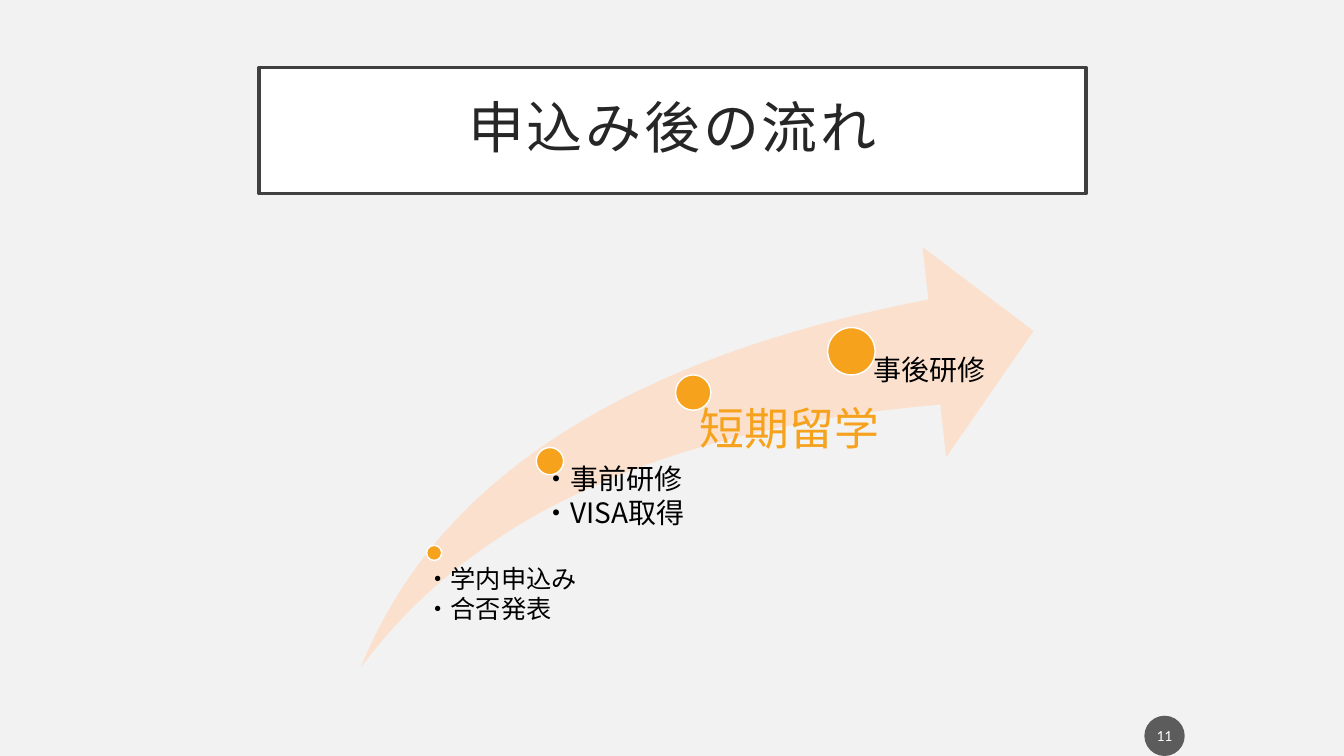
from pptx import Presentation
from pptx.dml.color import RGBColor
from pptx.enum.shapes import MSO_SHAPE as SHAPE
from pptx.enum.text import MSO_ANCHOR as ANCHOR, PP_ALIGN as ALIGN
from pptx.oxml.ns import qn
from pptx.util import Inches, Pt
from lxml.etree import SubElement

PAPER = RGBColor(0xF2, 0xF2, 0xF2)
WHITE = RGBColor(0xFF, 0xFF, 0xFF)
BLACK = RGBColor(0x00, 0x00, 0x00)
BADGE = RGBColor(0x1D, 0x1D, 0x1D)
FRAME = RGBColor(0x40, 0x40, 0x40)
INK = RGBColor(0x26, 0x26, 0x26)
PEACH = RGBColor(0xFB, 0xE0, 0xCD)
ORANGE = RGBColor(0xF6, 0xA2, 0x1D)

# Dot centre and diameter, label box, label inset, size, colour and lines
STEPS = [
    ((32.3, 73.13), 2, (31.06, 74.93, 14.03, 13.2), 0.08, 18, BLACK,
     ["・学内申込み", "・合否発表"]),
    ((40.92, 61), 3.6, (39.31, 61.6, 13.73, 25.33), 0.14, 20, BLACK,
     ["・事前研修", "・VISA取得"]),
    ((51.58, 51.93), 4.67, (50.64, 53.87, 19.5, 34.4), 0.19, 32, ORANGE,
     ["短期留学"]),
    ((63.35, 46.47), 6.27, (63.09, 47.07, 13.73, 39.87), 0.25, 20, BLACK,
     ["事後研修"]),
]


class Deck:
    """Draws on a grid of 100 columns by 100 rows."""
    font = "Noto Sans CJK JP"

    def __init__(self):
        self.prs = Presentation()
        self.prs.slide_width, self.prs.slide_height = Inches(13.33), Inches(7.5)
        self.col = self.prs.slide_width / 100
        self.row = self.prs.slide_height / 100
        self.slide = self.prs.slides.add_slide(self.prs.slide_layouts[6])
        fill = self.slide.background.fill
        fill.solid()
        fill.fore_color.rgb = PAPER

    def place(self, x, y, w, h):
        return (round(x * self.col), round(y * self.row),
                round(w * self.col), round(h * self.row))

    def shape(self, kind, box, fill, line=None, width=1, alpha=None):
        s = self.slide.shapes.add_shape(kind, *self.place(*box))
        s.shadow.inherit = False
        s.fill.solid()
        s.fill.fore_color.rgb = fill
        if alpha:
            color = s.element.spPr.find(".//" + qn("a:srgbClr"))
            SubElement(color, qn("a:alpha")).set("val", str(alpha * 1000))
        if line is None:
            s.line.fill.background()
        else:
            s.line.color.rgb = line
            s.line.width = Pt(width)
        return s

    def dot(self, center, diameter):
        """Circle around a centre; the diameter is in rows."""
        w = diameter * self.row / self.col
        x, y = center
        self.shape(SHAPE.OVAL, (x - w / 2, y - diameter / 2, w, diameter),
                   ORANGE, WHITE)

    def set_text(self, s, lines, size, color, insets, font=font,
                 align=ALIGN.LEFT, anchor=ANCHOR.TOP, spacing=0.9, after=0,
                 tracking=0):
        tf = s.text_frame
        tf.word_wrap = True
        tf.vertical_anchor = anchor
        (tf.margin_left, tf.margin_top,
         tf.margin_right, tf.margin_bottom) = map(Inches, insets)
        tf.text = "\n".join(lines)
        for p in tf.paragraphs:
            p.alignment = align
            p.line_spacing = spacing
            p.space_after = Pt(after)
            for r in p.runs:
                r.font.name, r.font.size = font, Pt(size)
                r.font.color.rgb = color
                rpr = r._r.get_or_add_rPr()
                SubElement(rpr, qn("a:ea")).set("typeface", font)
                if tracking:
                    rpr.set("spc", str(tracking * 100))

    def label(self, box, lines, size, color, inset):
        s = self.slide.shapes.add_textbox(*self.place(*box))
        self.set_text(s, lines, size, color, (inset, 0, 0, 0), after=2.4)


def main():
    deck = Deck()

    badge = deck.shape(SHAPE.OVAL, (85.15, 94.67, 3, 5.33), BADGE, alpha=70)
    deck.set_text(badge, ["11"], 11, WHITE, (0.02, 0.05, 0.02, 0.05), "Calibri",
                  ALIGN.CENTER, ANCHOR.MIDDLE, spacing=1)

    title = deck.shape(SHAPE.RECTANGLE, (19.28, 8.93, 61.52, 16.67),
                       WHITE, FRAME, 2.5)
    deck.set_text(title, ["申込み後の流れ"], 40, INK, (0.2,) * 4,
                  align=ALIGN.CENTER, anchor=ANCHOR.MIDDLE, tracking=2)

    arrow = deck.shape(SHAPE.SWOOSH_ARROW, (26.86, 32.67, 50.04, 55.6), PEACH)
    arrow.adjustments[0] = arrow.adjustments[1] = 0.25

    for center, diameter, box, inset, size, color, lines in STEPS:
        deck.dot(center, diameter)
        deck.label(box, lines, size, color, inset)

    deck.prs.save("out.pptx")


if __name__ == "__main__":
    main()
